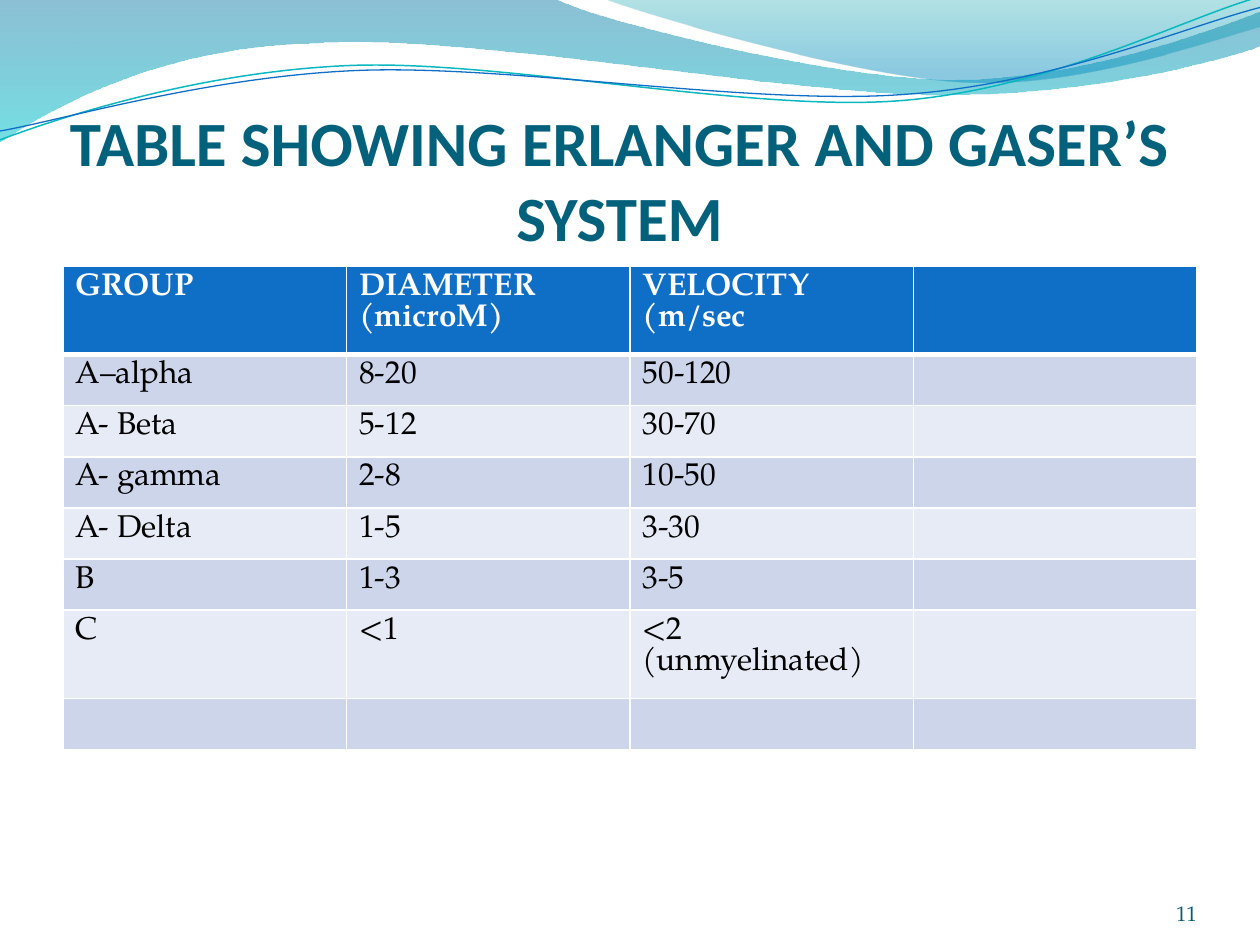
from math import cos, radians, sin

from lxml import etree
from pptx import Presentation
from pptx.dml.color import RGBColor
from pptx.enum import text
from pptx.util import Cm, Pt


class Theme:
    head, body = "Calibri", "TeX Gyre Pagella"
    title, cell, page = Pt(36), Pt(18), Pt(12)
    white, black = RGBColor(255, 255, 255), RGBColor(0, 0, 0)
    teal, slate = RGBColor(0x04, 0x61, 0x7B), RGBColor(0x04, 0x5D, 0x75)
    blue, aqua = RGBColor(0x0F, 0x6F, 0xC6), RGBColor(0x0A, 0xB8, 0xBF)
    bands = RGBColor(0xE7, 0xEB, 0xF5), RGBColor(0xCC, 0xD5, 0xEA)


INCH = 2.54
NS = "{http://schemas.openxmlformats.org/drawingml/2006/main}"

deck = Presentation()
deck.slide_width, deck.slide_height = Cm(25.4), Cm(19.05)
slide = deck.slides.add_slide(deck.slide_layouts[6])


def draw(start, steps, close, tilt=0, mid=(0, 0)):
    """Outline in inches: a step of 2 numbers is a line, of 6 a Bezier curve."""
    nodes = [start]
    for step in steps:
        nodes += zip(step[::2], step[1::2])
    # Undo the tilt around the middle; the shape's rotation brings it back
    co, si = cos(radians(tilt)), sin(radians(tilt))
    nodes = [(x - mid[0], y - mid[1]) for x, y in nodes]
    nodes = [(Cm(INCH * (mid[0] + x * co + y * si)),
              Cm(INCH * (mid[1] - x * si + y * co))) for x, y in nodes]
    pen = slide.shapes.build_freeform(*nodes[0])
    pen.add_line_segments(nodes[1:], close=close)
    shape = pen.convert_to_shape()
    shape.rotation = tilt
    shape.shadow.inherit = False
    # Join each three nodes of a curve into one Bezier segment
    lines = iter(list(shape._element.iter(NS + "lnTo")))
    for step in steps:
        first = next(lines)
        if len(step) == 6:
            first.tag = NS + "cubicBezTo"
            for other in (next(lines), next(lines)):
                first.append(other[0])
                other.getparent().remove(other)
    return shape


def write(box, words, font, size, color, bold, align):
    frame = box.text_frame
    frame.word_wrap = True
    frame.vertical_anchor = text.MSO_ANCHOR.BOTTOM
    frame.margin_left = frame.margin_right = frame.margin_top = frame.margin_bottom = 0
    par = frame.paragraphs[0]
    par.text, par.alignment = words, align
    par.font.name, par.font.size, par.font.bold = font, size, bold
    par.font.color.rgb = color
    return frame


# Waves: outline, then gradient stops (place, colour, opacity in percent)
waves = [
    ((0, 0), [(4.4, -0.01), (4.76, 0.17, 6.64, 0.63, 7.58, 0.63),
              (8.53, 0.63, 9.58, 0.26, 10, 0.09), (10.01, 0.36),
              (9.83, 0.44, 8.7, 0.76, 7.46, 0.75),
              (6.22, 0.75, 3.82, 0.28, 2.57, 0.34),
              (1.29, 0.36, 0.46, 0.83, -0.01, 1.13)],
     [(0, "0074A1", 45), (1, "00C6CF", 55)]),
    ((4.79, -0.01), [(5.09, 0.11, 6.82, 0.62, 7.69, 0.65),
                     (8.56, 0.69, 9.61, 0.32, 10, 0.21), (10, 0)],
     [(0, "00A1A9", 30), (0.8, "008BBF", 45)]),
]
for start, steps, stops in waves:
    wave = draw(start, steps, True)
    wave.line.fill.background()
    wave.fill.gradient()
    wave.fill.gradient_angle = 270
    for stop, (place, color, shade) in zip(wave.fill.gradient_stops, stops):
        stop.position = place
        stop.color.rgb = RGBColor.from_string(color)
    tints = wave._element.spPr.iter(NS + "srgbClr")
    for tint, (place, color, shade) in zip(tints, stops):
        etree.SubElement(tint, NS + "alpha", val=str(shade * 1000))

# Thin curves, tilted around their middles
curves = [
    ((0, 1.11), [(0.48, 0.93, 1.58, 0.57, 2.77, 0.52),
                 (3.95, 0.47, 5.93, 0.89, 7.13, 0.8),
                 (8.33, 0.71, 9.38, 0.15, 9.98, -0.02)],
     (4.99, 0.57), Theme.aqua, 0.85),
    ((0, 1.04), [(0.47, 0.96, 1.64, 0.61, 2.83, 0.56),
                 (4.03, 0.51, 5.97, 0.84, 7.17, 0.75),
                 (8.36, 0.67, 9.41, 0.21, 10, 0.06)],
     (5, 0.59), Theme.blue, 0.75),
]
for start, steps, mid, color, width in curves:
    curve = draw(start, steps, False, 357.3, mid)
    curve.fill.background()
    curve.line.color.rgb, curve.line.width = color, Pt(width)

# Title
box = slide.shapes.add_textbox(Cm(1.06), Cm(1.95), Cm(22.86), Cm(3.18))
frame = write(box, "TABLE SHOWING ERLANGER AND GASER’S SYSTEM", Theme.head,
              Theme.title, Theme.teal, True, text.PP_ALIGN.CENTER)
frame.margin_top = Cm(0.13)

# Table
rows = [
    ("GROUP", "DIAMETER (microM)", "VELOCITY (m/sec", ""),
    ("A–alpha", "8-20", "50-120", ""),
    ("A- Beta", "5-12", "30-70", ""),
    ("A- gamma", "2-8", "10-50", ""),
    ("A- Delta", "1-5", "3-30", ""),
    ("B", "1-3", "3-5", ""),
    ("C", "<1", "<2 (unmyelinated)", ""),
    ("", "", "", ""),
]
high = Cm(1.03)
panel = slide.shapes.add_table(len(rows), 4, Cm(1.27), Cm(5.37),
                               Cm(22.86), high * len(rows))
grid = panel.table
for r, row in enumerate(rows):
    grid.rows[r].height = high
    for c, words in enumerate(row):
        cell = grid.cell(r, c)
        cell.fill.solid()
        cell.fill.fore_color.rgb = Theme.bands[r % 2] if r else Theme.blue
        if words:
            # Row heights follow the font of the run
            run = cell.text_frame.paragraphs[0].add_run()
            run.text, font = words, run.font
            font.name, font.size, font.bold = Theme.body, Theme.cell, r == 0
            font.color.rgb = Theme.black if r else Theme.white
        # White borders, thick under the header
        for i, side in enumerate("LRTB"):
            thick = (r, side) in ((0, "B"), (1, "T"))
            line = etree.Element(f"{NS}ln{side}", w=str(Pt(3 if thick else 1)))
            fill = etree.SubElement(line, NS + "solidFill")
            etree.SubElement(fill, NS + "srgbClr", val=str(Theme.white))
            cell._tc.get_or_add_tcPr().insert(i, line)
panel.height = Cm(8.99)

# Page number
box = slide.shapes.add_textbox(Cm(22.02), Cm(17.65), Cm(2.11), Cm(1.02))
write(box, "11", Theme.body, Theme.page, Theme.slate, False, text.PP_ALIGN.RIGHT)

deck.save("out.pptx")
